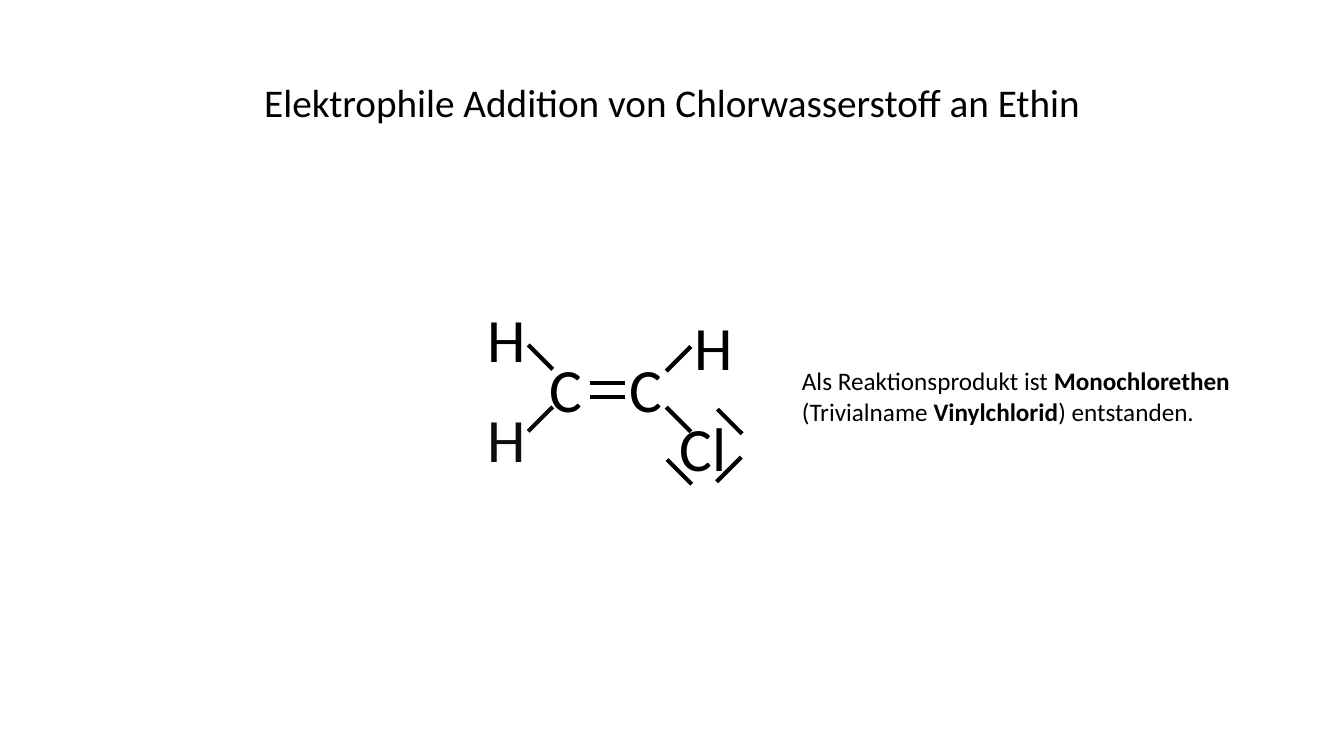
from lxml.etree import SubElement
from pptx import Presentation
from pptx.dml.color import RGBColor
from pptx.enum.shapes import MSO_CONNECTOR as Connector
from pptx.enum.text import MSO_AUTO_SIZE as AutoSize, PP_ALIGN as Align
from pptx.oxml.ns import qn
from pptx.util import Cm, Pt

BLACK = RGBColor(0x00, 0x00, 0x00)
SOFT_BLACK = RGBColor(0x0D, 0x0D, 0x0D)

ATOM_WIDTH, ATOM_HEIGHT = 1.47, 2.13
BOND_STEP = 0.62  # horizontal and vertical reach of a diagonal stroke


class MoleculeSlide:
    """Draws text and bonds in one style; lengths are centimetres."""

    font_name = "Calibri"
    bond_width = Pt(3)

    def __init__(self, slide):
        self.slide = slide

    def text(self, runs, left, top, width, height, size,
             color=BLACK, align=Align.LEFT):
        box = self.slide.shapes.add_textbox(
            Cm(left), Cm(top), Cm(width), Cm(height))
        frame = box.text_frame
        frame.word_wrap = True
        frame.auto_size = AutoSize.SHAPE_TO_FIT_TEXT
        paragraph = frame.paragraphs[0]
        paragraph.alignment = align
        for words, bold in runs:
            run = paragraph.add_run()
            run.text = words
            run.font.color.rgb = color
            formats = {"name": self.font_name, "size": Pt(size), "bold": bold}
            for name, value in formats.items():
                setattr(run.font, name, value)

    def atom(self, symbol, left, top, width=ATOM_WIDTH, color=BLACK):
        self.text([(symbol, False)], left, top, width, ATOM_HEIGHT, 44, color)

    def bond(self, left, top, across, down, color=BLACK):
        line = self.slide.shapes.add_connector(
            Connector.STRAIGHT, Cm(left), Cm(top),
            Cm(left + across), Cm(top + down))
        line.line.width = self.bond_width
        line.line.color.rgb = color
        SubElement(line._element.spPr, qn("a:effectLst"))


def main():
    presentation = Presentation()
    presentation.slide_width, presentation.slide_height = Cm(33.87), Cm(19.05)
    slide = presentation.slides.add_slide(presentation.slide_layouts[6])
    page = MoleculeSlide(slide)

    # Title
    page.text([("Elektrophile Addition von Chlorwasserstoff an Ethin", False)],
              5.49, 1.85, 22.89, 1.45, 28, align=Align.CENTER)

    # Atoms
    for symbol, left, top in [("C", 13.61, 8.71), ("C", 15.62, 8.71),
                              ("H", 12.04, 7.47), ("H", 17.25, 7.65)]:
        page.atom(symbol, left, top)
    page.atom("H", 12.04, 9.98, color=SOFT_BLACK)
    page.atom("Cl", 16.87, 10.21, width=2.44)

    # Double bond
    for top in (9.65, 10.01):
        page.bond(14.86, top, 0.89, 0)

    # Single bonds, then the lone pairs of chlorine
    for left, top, direction, color in [
            (13.31, 8.69, 1, BLACK), (13.31, 10.87, -1, SOFT_BLACK),
            (16.79, 9.35, -1, BLACK), (16.79, 10.26, 1, BLACK),
            (16.81, 11.58, 1, BLACK), (18.06, 12.14, -1, BLACK),
            (18.08, 10.31, 1, BLACK)]:
        page.bond(left, top, BOND_STEP, direction * BOND_STEP, color)

    # Explanation
    page.text([("Als Reaktionsprodukt ist ", False), ("Monochlorethen", True),
               (" (Trivialname ", False), ("Vinylchlorid", True),
               (") entstanden.", False)],
              19.96, 9.09, 11.53, 1.8, 18)

    presentation.save("out.pptx")


if __name__ == "__main__":
    main()
